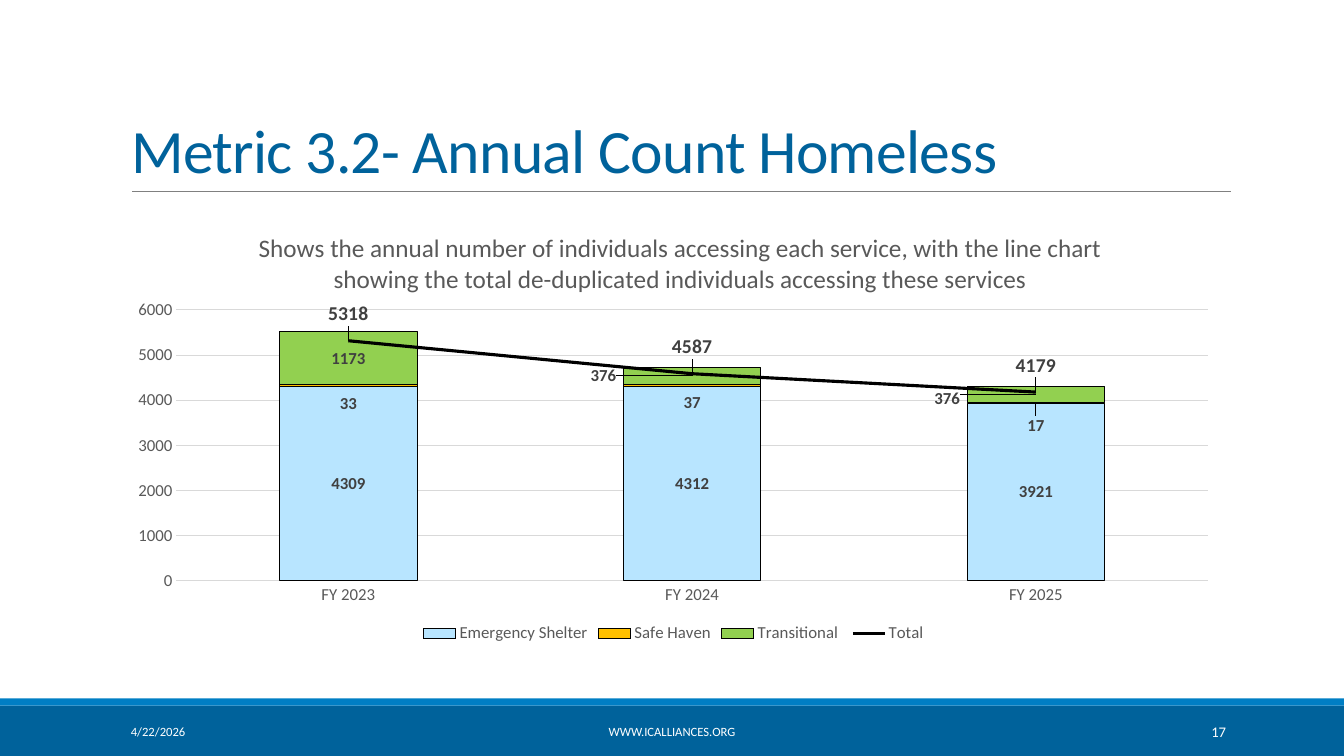
from dataclasses import dataclass, field

import pptx
import pptx.chart.data
import pptx.dml.color
import pptx.enum.chart
import pptx.enum.shapes
import pptx.enum.text
import pptx.oxml
import pptx.oxml.ns
import pptx.util

Inches = pptx.util.Inches
Pt = pptx.util.Pt
Align = pptx.enum.text.PP_ALIGN
Anchor = pptx.enum.text.MSO_ANCHOR
ChartKind = pptx.enum.chart.XL_CHART_TYPE
qn = pptx.oxml.ns.qn

FONT = "Calibri"
NAVY = "00629B"
WHITE = "FFFFFF"
BLACK = "000000"
GREY_TEXT = "595959"
GRID = "D9D9D9"
YEARS = ["FY 2023", "FY 2024", "FY 2025"]


@dataclass
class Band:
    top: float
    height: float
    fill: str


@dataclass
class FooterItem:
    text: str
    left: float
    width: float
    align: Align
    size: float = 9


@dataclass
class Service:
    name: str
    counts: list[int]
    fill: str
    label_size: float = 12
    label_shifts: dict[int, tuple[float, float]] = field(default_factory=dict)


BANDS = [Band(7, 0.5, NAVY), Band(6.93, 0.07, "007EC4")]
FOOTER = [
    FooterItem("4/22/2026", 1.2, 2.7, Align.LEFT),
    FooterItem("WWW.ICALLIANCES.ORG", 4.03, 5.27, Align.CENTER),
    FooterItem("17", 10.83, 1.43, Align.RIGHT, 10.5),
]
SERVICES = [
    Service("Emergency Shelter", [4309, 4312, 3921], "B8E5FF"),
    Service("Safe Haven", [33, 37, 17], "FFC000",
            label_shifts={0: (0, 0.04), 1: (0, 0.04), 2: (0, 0.05)}),
    Service("Transitional ", [1173, 376, 376], "92D050",
            label_shifts={1: (-0.08, 0), 2: (-0.08, 0.01)}),
]
TOTAL = Service("Total ", [5318, 4587, 4179], BLACK, 14,
                {0: (0, -0.06), 1: (0, -0.06), 2: (0, -0.06)})


def colour(value: str) -> pptx.dml.color.RGBColor:
    return pptx.dml.color.RGBColor.from_string(value)


def style_font(font, size: float, fill: str, bold: bool = False) -> None:
    font.name = FONT
    font.size = Pt(size)
    font.bold = bold
    font.color.rgb = colour(fill)


def style_line(line, fill: str, width: float) -> None:
    line.color.rgb = colour(fill)
    line.width = Pt(width)


def write_text(frame, text: str, *, size: float, fill: str, align: Align,
               anchor: Anchor, line_spacing: float | None = None,
               tracking: int | None = None) -> None:
    frame.word_wrap = True
    frame.auto_size = pptx.enum.text.MSO_AUTO_SIZE.NONE
    frame.vertical_anchor = anchor
    para = frame.paragraphs[0]
    para.alignment = align
    para.line_spacing = line_spacing
    span = para.add_run()
    span.text = text
    style_font(span.font, size, fill)
    if tracking is not None:
        span.font._element.set("spc", str(tracking))


def add_band(page, band: Band) -> None:
    box = page.shapes.add_shape(pptx.enum.shapes.MSO_SHAPE.RECTANGLE, 0, Inches(band.top),
                                Inches(13.33), Inches(band.height))
    box.shadow.inherit = False
    box.fill.solid()
    box.fill.fore_color.rgb = colour(band.fill)
    box.line.fill.background()


def add_rule(page) -> None:
    rule = page.shapes.add_connector(pptx.enum.shapes.MSO_CONNECTOR.STRAIGHT,
                                     Inches(1.31), Inches(1.9), Inches(12.21), Inches(1.9))
    style_line(rule.line, "808080", 0.5)
    properties = rule._element.spPr
    properties.append(properties.makeelement(qn("a:effectLst"), {}))


def add_title(page) -> None:
    title = page.shapes.title
    title.left, title.top = Inches(1.2), Inches(0.31)
    title.width, title.height = Inches(11), Inches(1.59)
    write_text(title.text_frame, "Metric 3.2- Annual Count Homeless", size=44, fill=NAVY,
               align=Align.LEFT, anchor=Anchor.BOTTOM, line_spacing=0.85, tracking=-50)


def add_footer(page, item: FooterItem) -> None:
    box = page.shapes.add_textbox(Inches(item.left), Inches(7.06), Inches(item.width), Inches(0.4))
    write_text(box.text_frame, item.text, size=item.size, fill=WHITE,
               align=item.align, anchor=Anchor.MIDDLE)


def manual_layout(**settings):
    parts = "".join(f'<c:{key} val="{value}"/>' for key, value in settings.items())
    return pptx.oxml.parse_xml(
        f'<c:layout {pptx.oxml.ns.nsdecls("c")}><c:manualLayout>{parts}'
        "</c:manualLayout></c:layout>")


def remove_children(parent, tag: str) -> None:
    for child in parent.findall(qn(tag)):
        parent.remove(child)


def move_last_series_to_line(chart) -> None:
    bars = chart.plots[0]._element
    series = bars.findall(qn("c:ser"))[-1]
    bars.remove(series)
    remove_children(series, "c:invertIfNegative")
    line = pptx.oxml.parse_xml(
        f'<c:lineChart {pptx.oxml.ns.nsdecls("c")}><c:grouping val="standard"/>'
        '<c:varyColors val="0"/><c:marker val="1"/></c:lineChart>')
    line.insert(2, series)
    for axis in bars.findall(qn("c:axId")):
        line.append(line.makeelement(qn("c:axId"), {"val": axis.get("val")}))
    bars.addnext(line)


def label_series(series, service: Service) -> None:
    position = pptx.enum.chart.XL_LABEL_POSITION.CENTER
    labels = series.data_labels
    labels.show_value = True
    labels.position = position
    style_font(labels.font, service.label_size, "404040", True)
    for index, (right, down) in service.label_shifts.items():
        label = series.points[index].data_label
        style_font(label.font, service.label_size, "404040", True)
        label.position = position
        entry = next(item for item in labels._element.findall(qn("c:dLbl"))
                     if item.find(qn("c:idx")).get("val") == str(index))
        entry.insert(1, manual_layout(x=right, y=down))


def style_axes(chart) -> None:
    for axis in (chart.category_axis, chart.value_axis):
        axis.major_tick_mark = pptx.enum.chart.XL_TICK_MARK.NONE
        axis.minor_tick_mark = pptx.enum.chart.XL_TICK_MARK.NONE
        style_font(axis.tick_labels.font, 12, GREY_TEXT)
    style_line(chart.category_axis.format.line, GRID, 0.75)
    values = chart.value_axis
    values.minimum_scale, values.maximum_scale, values.major_unit = 0, 6000, 1000
    values.format.line.fill.background()
    style_line(values.major_gridlines.format.line, GRID, 0.75)


def add_chart_title(chart) -> None:
    chart.has_title = True
    title = chart.chart_title
    para = title.text_frame.paragraphs[0]
    para.alignment = Align.CENTER
    span = para.add_run()
    span.text = ("Shows the annual number of individuals accessing each service, with the line "
                 "chart showing the total de-duplicated individuals accessing these services")
    style_font(span.font, 18, GREY_TEXT)
    remove_children(title._element, "c:layout")
    title._element.find(qn("c:tx")).addnext(
        manual_layout(xMode="edge", yMode="edge", x=0.12, y=0.05))


def add_count_chart(page) -> None:
    data = pptx.chart.data.CategoryChartData()
    data.categories = YEARS
    for service in [*SERVICES, TOTAL]:
        data.add_series(service.name, service.counts)
    chart = page.shapes.add_chart(ChartKind.COLUMN_STACKED, Inches(1.2), Inches(2.02),
                                  Inches(11), Inches(4.4), data).chart
    style_font(chart.font, 10, BLACK)
    move_last_series_to_line(chart)
    bars, line = chart.plots
    bars.gap_width, bars.overlap = 150, 100
    bars.vary_by_categories = False
    for series, service in zip(bars.series, SERVICES):
        series.format.fill.solid()
        series.format.fill.fore_color.rgb = colour(service.fill)
        style_line(series.format.line, BLACK, 0.75)
        label_series(series, service)
    total = line.series[0]
    style_line(total.format.line, TOTAL.fill, 2.25)
    total.marker.style = pptx.enum.chart.XL_MARKER_STYLE.NONE
    total.smooth = False
    label_series(total, TOTAL)
    style_axes(chart)
    add_chart_title(chart)
    chart.has_legend = True
    chart.legend.position = pptx.enum.chart.XL_LEGEND_POSITION.BOTTOM
    chart.legend.include_in_layout = False
    style_font(chart.legend.font, 12, GREY_TEXT)
    plot_area = chart._chartSpace.chart.plotArea
    remove_children(plot_area, "c:layout")
    plot_area.insert(0, manual_layout(layoutTarget="inner", xMode="edge", yMode="edge",
                                      x=0.05, y=0.24, w=0.93, h=0.61))


def main() -> None:
    deck = pptx.Presentation()
    deck.slide_width, deck.slide_height = Inches(13.33), Inches(7.5)
    page = deck.slides.add_slide(deck.slide_layouts[5])
    for band in BANDS:
        add_band(page, band)
    add_rule(page)
    add_title(page)
    add_count_chart(page)
    for item in FOOTER:
        add_footer(page, item)
    deck.save("out.pptx")


if __name__ == "__main__":
    main()
